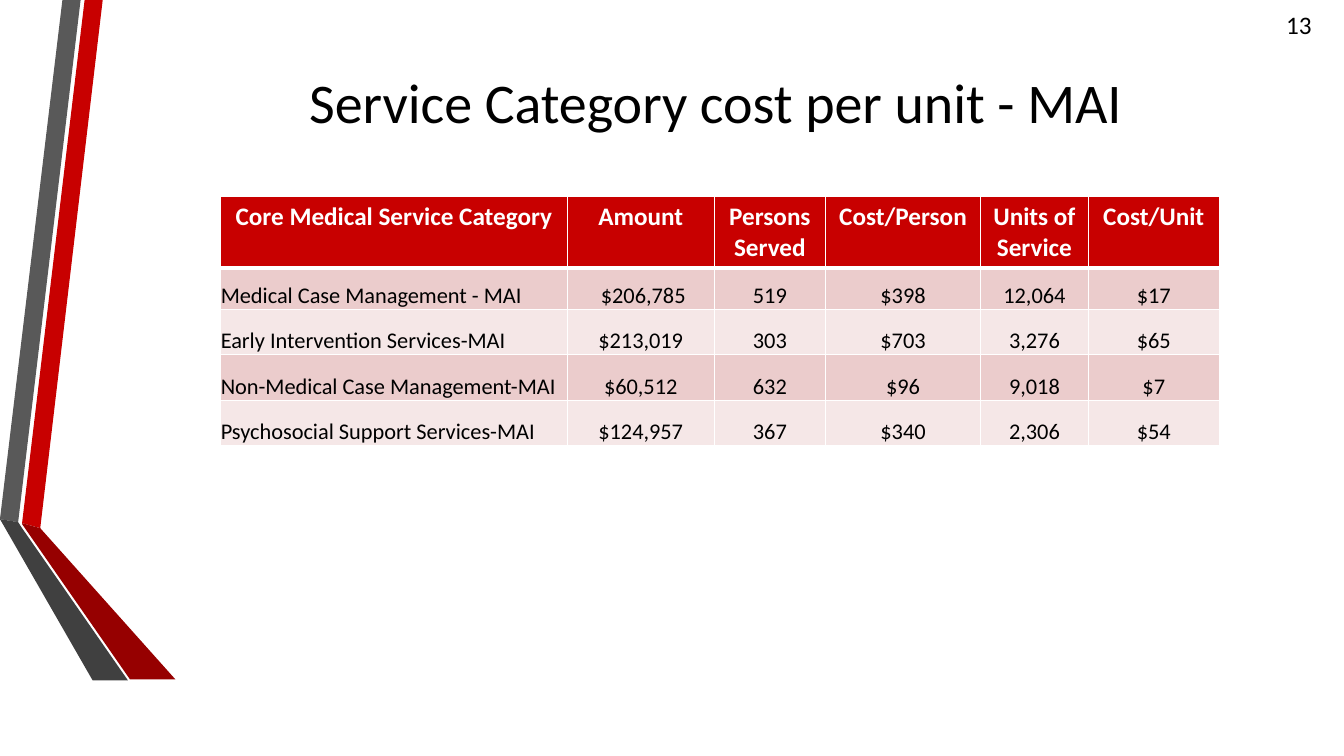
from dataclasses import dataclass

from lxml.etree import SubElement
from pptx import Presentation
from pptx.dml.color import RGBColor
from pptx.enum.text import MSO_ANCHOR, PP_ALIGN
from pptx.oxml.ns import qn
from pptx.util import Pt

# Content
TITLE = "Service Category cost per unit - MAI"
PAGE_NUMBER = "13"
HEADINGS = ["Core Medical Service Category", "Amount", "Persons Served",
            "Cost/Person", "Units of Service", "Cost/Unit"]
SERVICES = [
    ["Medical Case Management - MAI", " $206,785", "519", "$398", "12,064", "$17"],
    ["Early Intervention Services-MAI", "$213,019", "303", "$703", "3,276", "$65"],
    ["Non-Medical Case Management-MAI", "$60,512", "632", "$96", "9,018", "$7"],
    ["Psychosocial Support Services-MAI", "$124,957", "367", "$340", "2,306", "$54"],
]


@dataclass(frozen=True)
class Theme:
    font: str = "Calibri"
    title_size: int = 40
    heading_size: int = 18
    body_size: int = 16
    text: str = "000000"
    white: str = "FFFFFF"
    red: str = "C80000"
    dark_red: str = "960000"
    gray: str = "595959"
    dark_gray: str = "404040"
    bands: tuple = ("EBCCCC", "F5E7E7")


THEME = Theme()

# Layout, in points
SLIDE_SIZE = (960, 540)
TITLE_BOX = (116.6, 2.9, 789.1, 138.2)
PAGE_BOX = (911.5, 2.9, 48, 28.8)
TABLE_ORIGIN = (157.7, 140.4)
COLUMN_WIDTHS = [247.5, 105, 79.5, 110.75, 77, 93.5]
ROW_HEIGHTS = [51.2, 29.5, 32.4, 32.4, 32.4]
RULE, HEADING_RULE = 1, 3
RIBBONS = [
    (THEME.red, [(15.8, 373.7), (28.8, 377.3), (73.4, 0), (60.5, 0)]),
    (THEME.gray, [(57.6, 0), (44.6, 0), (0, 370.8), (13, 373)]),
    (THEME.dark_red, [(15.8, 374.4), (92.9, 485.3), (125.3, 485.3),
                      (28.8, 377.3), (15.8, 373.7)]),
    (THEME.dark_gray, [(91.4, 486), (15.8, 377.3), (13, 373),
                       (0, 370.8), (66.2, 486)]),
]


def style(paragraph, size, color=THEME.text, bold=False, align=PP_ALIGN.LEFT):
    paragraph.alignment = align
    font = paragraph.font
    font.name, font.size, font.bold = THEME.font, Pt(size), bold
    font.color.rgb = RGBColor.from_string(color)


def add_ribbon(shapes, color, corners):
    start, *rest = [(Pt(x), Pt(y)) for x, y in corners]
    builder = shapes.build_freeform(*start)
    builder.add_line_segments(rest, close=True)
    ribbon = builder.convert_to_shape()
    ribbon.fill.solid()
    ribbon.fill.fore_color.rgb = RGBColor.from_string(color)
    ribbon.line.fill.background()
    ribbon.shadow.inherit = False


def add_text(slide, box, text, size, align, anchor):
    frame = slide.shapes.add_textbox(*map(Pt, box)).text_frame
    frame.word_wrap = True
    frame.vertical_anchor = anchor
    frame.text = text
    style(frame.paragraphs[0], size, align=align)


def add_borders(cell, top, bottom):
    widths = {"a:lnL": RULE, "a:lnR": RULE, "a:lnT": top, "a:lnB": bottom}
    for side, width in widths.items():
        border = SubElement(cell._tc.get_or_add_tcPr(), qn(side), w=str(Pt(width)))
        SubElement(SubElement(border, qn("a:solidFill")), qn("a:srgbClr"), val=THEME.white)


def fill_cell(cell, text, row, column):
    is_heading = row == 0
    add_borders(cell, HEADING_RULE if row == 1 else RULE,
                HEADING_RULE if is_heading else RULE)
    cell.fill.solid()
    fill = THEME.red if is_heading else THEME.bands[(row - 1) % 2]
    cell.fill.fore_color.rgb = RGBColor.from_string(fill)
    cell.text = text
    paragraph = cell.text_frame.paragraphs[0]
    if is_heading:
        style(paragraph, THEME.heading_size, THEME.white, True, PP_ALIGN.CENTER)
    else:
        cell.vertical_anchor = MSO_ANCHOR.BOTTOM
        cell.margin_left = cell.margin_right = cell.margin_top = cell.margin_bottom = 0
        style(paragraph, THEME.body_size,
              align=PP_ALIGN.CENTER if column else PP_ALIGN.LEFT)


def add_cost_table(slide):
    rows = [HEADINGS, *SERVICES]
    costs = slide.shapes.add_table(
        len(rows), len(HEADINGS), *map(Pt, TABLE_ORIGIN),
        Pt(sum(COLUMN_WIDTHS)), Pt(sum(ROW_HEIGHTS))).table
    for column, width in zip(costs.columns, COLUMN_WIDTHS):
        column.width = Pt(width)
    for row, height in zip(costs.rows, ROW_HEIGHTS):
        row.height = Pt(height)
    for r, texts in enumerate(rows):
        for c, text in enumerate(texts):
            fill_cell(costs.cell(r, c), text, r, c)


def main():
    deck = Presentation()
    deck.slide_width, deck.slide_height = map(Pt, SLIDE_SIZE)
    slide = deck.slides.add_slide(deck.slide_layouts[6])

    # Folded ribbons on the left edge
    ribbon_group = slide.shapes.add_group_shape()
    for color, corners in RIBBONS:
        add_ribbon(ribbon_group.shapes, color, corners)

    # Page number and title
    add_text(slide, PAGE_BOX, PAGE_NUMBER, THEME.heading_size,
             PP_ALIGN.LEFT, MSO_ANCHOR.TOP)
    add_text(slide, TITLE_BOX, TITLE, THEME.title_size,
             PP_ALIGN.CENTER, MSO_ANCHOR.MIDDLE)

    # Cost table
    add_cost_table(slide)
    deck.save("out.pptx")


if __name__ == "__main__":
    main()
